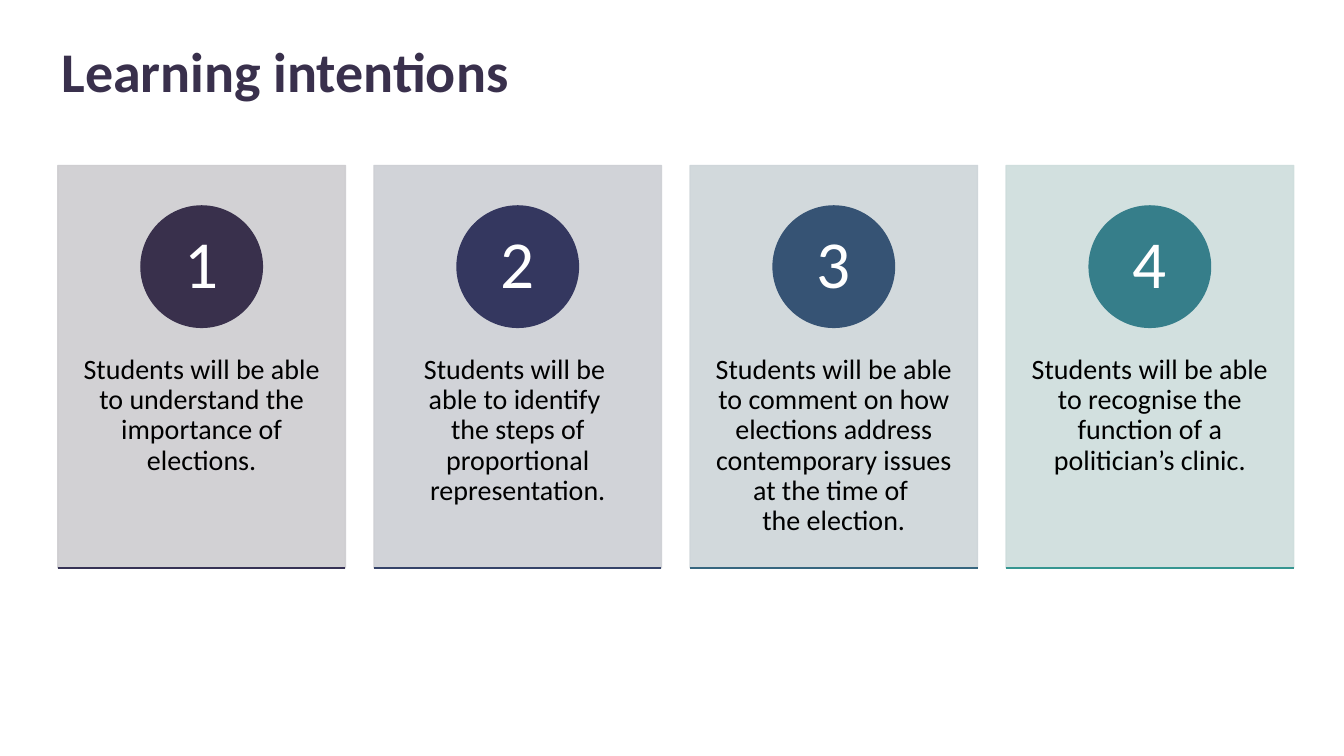
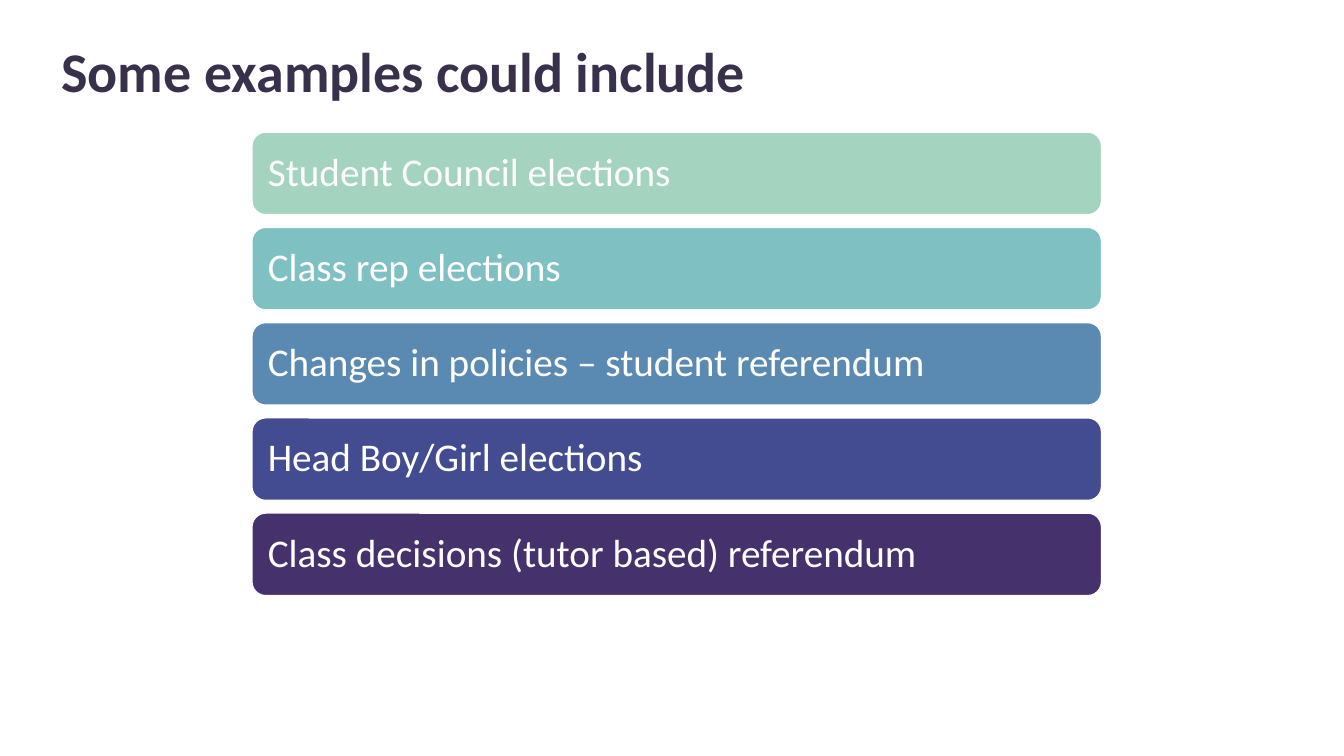
"""Build two lesson slides: numbered learning intentions and a list of examples."""
from lxml.etree import SubElement
from pptx import Presentation
from pptx.dml.color import RGBColor
from pptx.enum.shapes import MSO_CONNECTOR, MSO_SHAPE
from pptx.enum.text import MSO_ANCHOR, MSO_AUTO_SIZE, PP_ALIGN
from pptx.oxml.ns import qn
from pptx.util import Cm, Pt

FONT = "Calibri"
COLOURS = {"title": "39304C", "text": "000000", "light": "FFFFFF"}

INTENTIONS = [
    (["Students will be able to understand the importance of elections."],
     {"panel": "CECDD0", "circle": "39304C", "rule": "363255"}),
    (["Students will be ", "able to identify ",
      "the steps of proportional representation."],
     {"panel": "CDCFD4", "circle": "34375F", "rule": "354369"}),
    (["Students will be able to comment on how elections address "
      "contemporary issues at the time of ", "the election."],
     {"panel": "CED5D9", "circle": "365374", "rule": "36667F"}),
    (["Students will be able to recognise the function of a politician’s clinic."],
     {"panel": "CEDDDC", "circle": "367E8A", "rule": "369691"}),
]

EXAMPLES = {
    "Student Council elections": "A4D3BF",
    "Class rep elections": "7FC1C2",
    "Changes in policies – student referendum": "5A8AB1",
    "Head Boy/Girl elections": "444C91",
    "Class decisions (tutor based) referendum": "45326C",
}


def rgb(value):
    """Turn a hex string into a colour."""
    return RGBColor.from_string(value)


def write(box, lines, size, colour, align, anchor, insets, bold=False):
    """Write one paragraph, with a line break between the given lines."""
    frame = box.text_frame
    frame.word_wrap = True
    frame.auto_size = MSO_AUTO_SIZE.NONE
    frame.vertical_anchor = anchor
    frame.margin_left = frame.margin_right = Cm(insets[0])
    frame.margin_top = frame.margin_bottom = Cm(insets[1])
    para = frame.paragraphs[0]
    para.alignment = align
    para.line_spacing = 0.9
    for number, line in enumerate(lines):
        if number:
            para.add_line_break()
        span = para.add_run()
        span.text = line
        span.font.name = FONT
        span.font.size = Pt(size)
        span.font.bold = bold
        span.font.color.rgb = rgb(colour)


def add_block(page, preset, left, top, width, height, fill, line):
    """Add a filled preset shape, measured in centimetres."""
    block = page.shapes.add_shape(preset, Cm(left), Cm(top), Cm(width), Cm(height))
    block.shadow.inherit = False
    block.fill.solid()
    block.fill.fore_color.rgb = rgb(fill)
    block.line.color.rgb = rgb(line)
    block.line.width = Pt(1)
    return block


def set_opacity(shape, percent):
    """Make the fill and outline of a shape partly transparent."""
    for colour in shape._element.spPr.iter(qn("a:srgbClr")):
        SubElement(colour, qn("a:alpha")).set("val", str(percent * 1000))


def add_rule(page, left, top, width, colour):
    """Add a thin horizontal line."""
    rule = page.shapes.add_connector(
        MSO_CONNECTOR.STRAIGHT, Cm(left), Cm(top), Cm(left + width), Cm(top))
    rule.line.color.rgb = rgb(colour)
    rule.line.width = Pt(1)
    SubElement(rule._element.spPr, qn("a:effectLst"))


def add_page(deck, heading):
    """Add a slide with the shared title style."""
    page = deck.slides.add_slide(deck.slide_layouts[5])
    title = page.shapes.title
    title.left, title.top, title.width, title.height = Cm(1.3), Cm(1.02), Cm(29.2), Cm(1.73)
    write(title, [heading], 40, COLOURS["title"], PP_ALIGN.LEFT,
          MSO_ANCHOR.MIDDLE, (0.25, 0.13), bold=True)
    return page


def add_card(page, left, top, width, height, number, lines, colours):
    """Add a panel with a numbered circle, its text and a rule along the bottom."""
    circle_size, circle_drop, text_drop = 3.06, 1.02, 4.78
    panel = add_block(page, MSO_SHAPE.RECTANGLE, left, top, width, height,
                      colours["panel"], colours["panel"])
    set_opacity(panel, 90)
    write(panel, lines, 20, COLOURS["text"], PP_ALIGN.CENTER, MSO_ANCHOR.TOP, (0.56, 0.2))
    panel.text_frame.margin_top = Cm(text_drop)
    circle = add_block(page, MSO_SHAPE.OVAL, left + (width - circle_size) / 2,
                       top + circle_drop, circle_size, circle_size,
                       colours["circle"], colours["circle"])
    write(circle, [str(number)], 48, COLOURS["light"], PP_ALIGN.CENTER,
          MSO_ANCHOR.MIDDLE, (0.23, 0.03))
    add_rule(page, left, top + height, width, colours["rule"])


def add_cards(page, left, top, width, height, gap):
    """Spread the learning intentions evenly across a box."""
    card_width = (width - gap * (len(INTENTIONS) - 1)) / len(INTENTIONS)
    for index, (lines, colours) in enumerate(INTENTIONS):
        add_card(page, left + index * (card_width + gap), top, card_width, height,
                 index + 1, lines, colours)


def add_bars(page, left, top, width, height, gap):
    """Stack the examples as rounded bars that fill a box."""
    bar_height = (height - gap * (len(EXAMPLES) - 1)) / len(EXAMPLES)
    for index, (label, colour) in enumerate(EXAMPLES.items()):
        bar = add_block(page, MSO_SHAPE.ROUNDED_RECTANGLE, left,
                        top + index * (bar_height + gap), width, bar_height,
                        colour, COLOURS["light"])
        write(bar, [label], 28, COLOURS["light"], PP_ALIGN.LEFT,
              MSO_ANCHOR.MIDDLE, (0.3, 0.3))


def main():
    """Build and save the deck."""
    deck = Presentation()
    deck.slide_width, deck.slide_height = Cm(33.87), Cm(19.05)
    add_cards(add_page(deck, "Learning intentions"), 1.46, 4.17, 31.14, 10.14, 0.72)
    add_bars(add_page(deck, "Some examples could include"), 6.35, 3.33, 21.41, 11.68, 0.32)
    deck.save("out.pptx")


if __name__ == "__main__":
    main()
